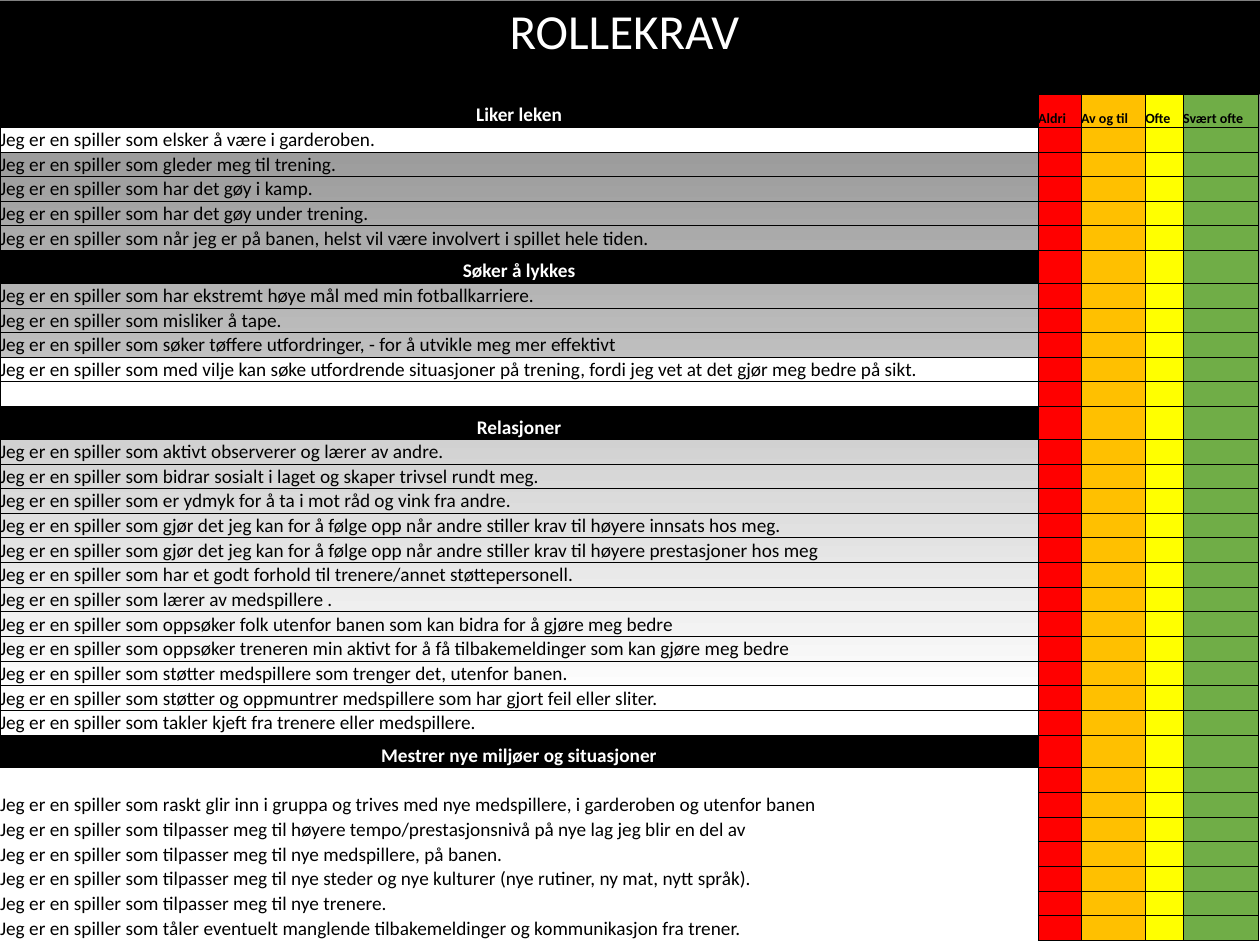
from lxml import etree
from pptx import Presentation
from pptx import util as u
from pptx.dml.color import RGBColor
from pptx.enum import text
from pptx.oxml import ns

BLACK = RGBColor(0x00, 0x00, 0x00)
WHITE = RGBColor(0xFF, 0xFF, 0xFF)
GREY = RGBColor(0x80, 0x80, 0x80)
RED = RGBColor(0xFF, 0x00, 0x00)
ORANGE = RGBColor(0xFF, 0xC0, 0x00)
YELLOW = RGBColor(0xFF, 0xFF, 0x00)
GREEN = RGBColor(0x70, 0xAD, 0x47)

RATINGS = [("Aldri", RED, 0.34), ("Av og til", ORANGE, 0.51),
           ("Ofte", YELLOW, 0.3), ("Svært ofte", GREEN, 0.6)]
STATEMENT_WIDTH = 8.24
HEADING_HEIGHT = 0.26
TABLE_HEIGHT = 6.72

PROMPT = "Jeg er en spiller som "
SECTIONS = [
    ("Liker leken", [
        "elsker å være i garderoben.",
        "gleder meg til trening.",
        "har det gøy i kamp.",
        "har det gøy under trening.",
        "når jeg er på banen, helst vil være involvert i spillet hele tiden.",
    ]),
    ("Søker å lykkes", [
        "har ekstremt høye mål med min fotballkarriere.",
        "misliker å tape.",
        "søker tøffere utfordringer, - for å utvikle meg mer effektivt",
        "med vilje kan søke utfordrende situasjoner på trening, "
        "fordi jeg vet at det gjør meg bedre på sikt.",
        "",
    ]),
    ("Relasjoner", [
        "aktivt observerer og lærer av andre.",
        "bidrar sosialt i laget og skaper trivsel rundt meg.",
        "er ydmyk for å ta i mot råd og vink fra andre.",
        "gjør det jeg kan for å følge opp når andre stiller krav til høyere innsats hos meg.",
        "gjør det jeg kan for å følge opp når andre stiller krav til høyere prestasjoner hos meg",
        "har et godt forhold til trenere/annet støttepersonell.",
        "lærer av medspillere .",
        "oppsøker folk utenfor banen som kan bidra for å gjøre meg bedre",
        "oppsøker treneren min aktivt for å få tilbakemeldinger som kan gjøre meg bedre",
        "støtter medspillere som trenger det, utenfor banen.",
        "støtter og oppmuntrer medspillere som har gjort feil eller sliter.",
        "takler kjeft fra trenere eller medspillere.",
    ]),
    ("Mestrer nye miljøer og situasjoner", [
        "",
        "raskt glir inn i gruppa og trives med nye medspillere, i garderoben og utenfor banen",
        "tilpasser meg til høyere tempo/prestasjonsnivå på nye lag jeg blir en del av",
        "tilpasser meg til nye medspillere, på banen.",
        "tilpasser meg til nye steder og nye kulturer (nye rutiner, ny mat, nytt språk).",
        "tilpasser meg til nye trenere.",
        "tåler eventuelt manglende tilbakemeldinger og kommunikasjon fra trener.",
    ]),
]
WHITE_ROWS = {1, 10, 11}
ALL_SIDES = "LRTB"


class RoleSlide:
    font = "Calibri"

    def __init__(self, prs):
        self.slide = prs.slides.add_slide(prs.slide_layouts[5])

    def background(self, top, bottom, end):
        fill = self.slide.background.fill
        fill.gradient()
        fill.gradient_angle = 270
        for stop, color, position in zip(fill.gradient_stops, (top, bottom), (0, end)):
            stop.color.rgb = color
            stop.position = position

    def run(self, paragraph, words, size, color, bold=False):
        run = paragraph.add_run()
        run.text = words
        run.font.name = self.font
        run.font.size = u.Pt(size)
        run.font.bold = bold
        run.font.color.rgb = color

    def title(self, words, left, top, width, height):
        title = self.slide.shapes.title
        title.left, title.top = u.Inches(left), u.Inches(top)
        title.width, title.height = u.Inches(width), u.Inches(height)
        title.fill.solid()
        title.fill.fore_color.rgb = BLACK
        frame = title.text_frame
        frame.auto_size = text.MSO_AUTO_SIZE.NONE
        frame.vertical_anchor = text.MSO_ANCHOR.TOP
        heading = frame.paragraphs[0]
        heading.alignment = text.PP_ALIGN.CENTER
        heading.line_spacing = 0.9
        self.run(heading, words, 28, WHITE)

    def table(self, left, top, widths, heights):
        frame = self.slide.shapes.add_table(
            len(heights), len(widths), u.Inches(left), u.Inches(top),
            u.Inches(sum(widths)), u.Inches(sum(heights)))
        table = frame.table
        table.first_row = table.horz_banding = False
        for column, width in zip(table.columns, widths):
            column.width = u.Inches(width)
        for row, height in zip(table.rows, heights):
            row.height = u.Inches(height)
        return table

    def borders(self, cell, sides):
        """Draw the given sides in black and hide the others."""
        properties = cell._tc.get_or_add_tcPr()
        for side in ALL_SIDES:
            line = etree.SubElement(properties, ns.qn(f"a:ln{side}"), w=str(u.Pt(0.5)))
            if side in sides:
                paint = etree.SubElement(line, ns.qn("a:solidFill"))
                etree.SubElement(paint, ns.qn("a:srgbClr"), val=str(BLACK))
            else:
                etree.SubElement(line, ns.qn("a:noFill"))

    def cell(self, cell, words="", fill=None, size=11, color=BLACK,
             bold=False, centred=False, sides=ALL_SIDES):
        self.borders(cell, sides)
        if fill is None:
            cell.fill.background()
        else:
            cell.fill.solid()
            cell.fill.fore_color.rgb = fill
        cell.margin_left = cell.margin_right = 0
        cell.margin_top = cell.margin_bottom = 0
        cell.vertical_anchor = text.MSO_ANCHOR.BOTTOM
        paragraph = cell.text_frame.paragraphs[0]
        if centred:
            paragraph.alignment = text.PP_ALIGN.CENTER
        if words:
            self.run(paragraph, words, size, color, bold)
        else:
            etree.SubElement(paragraph._p, ns.qn("a:endParaRPr"), sz=str(size * 100))


def main():
    prs = Presentation()
    prs.slide_width, prs.slide_height = u.Inches(10), u.Inches(7.5)
    page = RoleSlide(prs)
    page.background(GREY, WHITE, 0.74)
    page.title("ROLLEKRAV ", 0, 0.01, 10, 0.74)

    rows = []
    for heading, statements in SECTIONS:
        rows.append((heading, True))
        rows += [(PROMPT + s if s else "", False) for s in statements]
    headings = len(SECTIONS)
    statement_height = (TABLE_HEIGHT - headings * HEADING_HEIGHT) / (len(rows) - headings)
    heights = [HEADING_HEIGHT if is_heading else statement_height for _, is_heading in rows]
    widths = [STATEMENT_WIDTH] + [width for _, _, width in RATINGS]
    table = page.table(0, 0.75, widths, heights)

    last_section = len(rows) - len(SECTIONS[-1][1]) - 1
    for index, (words, is_heading) in enumerate(rows):
        statement = table.cell(index, 0)
        if is_heading:
            sides = "TR" if index == last_section else ALL_SIDES
            page.cell(statement, words, BLACK, color=WHITE, bold=True,
                      centred=True, sides=sides)
        else:
            page.cell(statement, words, WHITE if index in WHITE_ROWS else None,
                      sides="R" if index > last_section else ALL_SIDES)
        for column, (label, color, _) in enumerate(RATINGS, start=1):
            page.cell(table.cell(index, column), label if index == 0 else "",
                      color, size=8, bold=True)

    prs.save("out.pptx")


if __name__ == "__main__":
    main()
